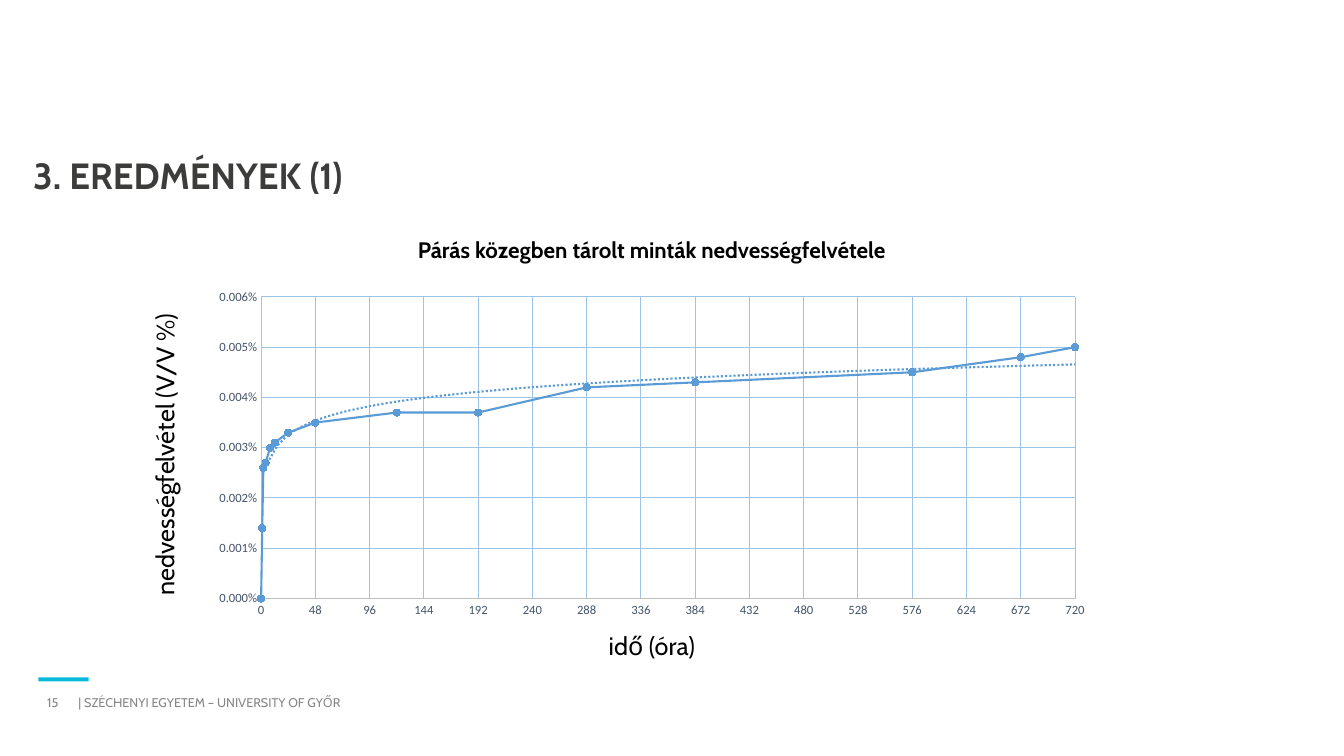
from dataclasses import dataclass

from lxml import etree
from pptx import Presentation
from pptx import util as u
from pptx.chart.data import XyChartData
from pptx.dml.color import RGBColor
from pptx.enum import chart as ch, shapes, text
from pptx.oxml import parse_xml
from pptx.oxml.ns import nsdecls, qn


@dataclass(frozen=True)
class Theme:
    font: str = "Cabin"
    chart_font: str = "Calibri"
    ink: str = "000000"
    heading: str = "3C3C3B"
    muted: str = "868686"
    accent: str = "07B9D9"
    curve: str = "5B9BD5"
    grid: str = "9DC3E6"
    axis: str = "BFBFBF"
    tick: str = "44546A"
    title_size: int = 26
    label_size: int = 18
    chart_title_size: int = 16
    small_size: int = 9


T = Theme()
WIDTH, HEIGHT = u.Inches(13.33), u.Inches(7.5)
HOURS = [0, 1, 2, 4, 8, 12, 24, 48, 120, 192, 288, 384, 576, 672, 720]
MOISTURE_E6 = [0, 14, 26, 27, 30, 31, 33, 35, 37, 37, 42, 43, 45, 48, 50]


def rgb(value):
    return RGBColor.from_string(value)


def place(left, top, width, height):
    """Turns percentages of the slide into lengths."""
    return (int(WIDTH * left / 100), int(HEIGHT * top / 100),
            int(WIDTH * width / 100), int(HEIGHT * height / 100))


def style_font(font, name, size, color, bold=False):
    font.name = name
    font.size = u.Pt(size)
    font.bold = bold
    font.color.rgb = rgb(color)


def style_line(line, color, width=0.75):
    line.color.rgb = rgb(color)
    line.width = u.Pt(width)


def add_text(slide, box, words, size, color, bold=False, centred=False,
             wrap=True, rotation=0, spacing=1.0):
    sp = slide.shapes.add_textbox(*place(*box))
    sp.rotation = rotation
    tf = sp.text_frame
    tf.word_wrap = wrap
    tf.text = words
    p = tf.paragraphs[0]
    p.alignment = text.PP_ALIGN.CENTER if centred else text.PP_ALIGN.LEFT
    p.line_spacing = spacing
    style_font(p.runs[0].font, T.font, size, color, bold)


def add_bar(slide, box):
    sp = slide.shapes.add_shape(shapes.MSO_SHAPE.RECTANGLE, *place(*box))
    sp.shadow.inherit = False
    sp.fill.solid()
    sp.fill.fore_color.rgb = rgb(T.accent)
    sp.line.fill.background()


def style_axis(axis, top, step, number_format):
    axis.minimum_scale, axis.maximum_scale, axis.major_unit = 0, top, step
    axis.has_major_gridlines = True
    style_line(axis.major_gridlines.format.line, T.grid)
    style_line(axis.format.line, T.axis)
    axis.major_tick_mark = axis.minor_tick_mark = ch.XL_TICK_MARK.NONE
    axis.tick_labels.number_format = number_format
    axis.tick_labels.number_format_is_linked = False
    style_font(axis.tick_labels.font, T.chart_font, T.small_size, T.tick)


def add_log_trend(series):
    trend = parse_xml(
        f'<c:trendline {nsdecls("c", "a")}><c:spPr><a:ln w="{u.Pt(1.5)}">'
        f'<a:solidFill><a:srgbClr val="{T.curve}"/></a:solidFill>'
        '<a:prstDash val="sysDot"/></a:ln></c:spPr>'
        '<c:trendlineType val="log"/><c:dispRSqr val="0"/>'
        '<c:dispEq val="0"/></c:trendline>')
    series._element.find(qn("c:xVal")).addprevious(trend)


def set_plot_area(chart, **shares):
    area = chart._chartSpace.chart.plotArea
    for old in area.findall(qn("c:layout")):
        area.remove(old)
    layout = etree.Element(qn("c:layout"))
    manual = etree.SubElement(layout, qn("c:manualLayout"))
    settings = dict(layoutTarget="inner", xMode="edge", yMode="edge", **shares)
    for tag, value in settings.items():
        etree.SubElement(manual, qn(f"c:{tag}")).set("val", str(value))
    area.insert(0, layout)


def add_moisture_chart(slide, box):
    data = XyChartData()
    points = data.add_series("Series 1")
    for hour, moisture in zip(HOURS, MOISTURE_E6):
        points.add_data_point(hour, moisture / 1e6)
    chart = slide.shapes.add_chart(
        ch.XL_CHART_TYPE.XY_SCATTER_LINES, *place(*box), data).chart
    chart.has_title = chart.has_legend = False
    style_font(chart.font, T.chart_font, 10, T.ink)
    chart.plots[0].vary_by_categories = False
    style_axis(chart.category_axis, 720, 48, "General")
    style_axis(chart.value_axis, 6e-5, 1e-5, "0.000%")
    series = chart.plots[0].series[0]
    series.smooth = False
    style_line(series.format.line, T.curve, 1.5)
    marker = series.marker
    marker.style, marker.size = ch.XL_MARKER_STYLE.CIRCLE, 5
    marker.format.fill.solid()
    marker.format.fill.fore_color.rgb = rgb(T.curve)
    style_line(marker.format.line, T.curve)
    add_log_trend(series)
    set_plot_area(chart, x=0.066, y=0.04, w=0.903, h=0.883)


def main():
    prs = Presentation()
    prs.slide_width, prs.slide_height = WIDTH, HEIGHT
    slide = prs.slides.add_slide(prs.slide_layouts[6])
    add_bar(slide, (2.85, 89.6, 3.75, 0.53))
    add_text(slide, (5.1, 91.33, 22.5, 3.33),
             "| SZÉCHENYI EGYETEM – UNIVERSITY OF GYŐR",
             T.small_size, T.muted, wrap=False)
    add_text(slide, (2.78, 91.33, 2.93, 3.33), "15",
             T.small_size, T.muted, wrap=False)
    add_text(slide, (1.73, 20.27, 93.6, 12), "3. EREDMÉNYEK (1)",
             T.title_size, T.heading, bold=True, spacing=0.9)
    add_moisture_chart(slide, (15, 37.47, 67.07, 45.2))
    add_text(slide, (38.71, 82.67, 19.58, 5.33), "idő (óra)",
             T.label_size, T.ink, centred=True)
    add_text(slide, (-0.6, 57.47, 25.66, 5.33), "nedvességfelvétel (V/V %)",
             T.label_size, T.ink, centred=True, rotation=270)
    add_text(slide, (27.08, 30.53, 42.84, 4.93),
             "Párás közegben tárolt minták nedvességfelvétele",
             T.chart_title_size, T.ink, bold=True, centred=True)
    prs.save("out.pptx")


if __name__ == "__main__":
    main()
